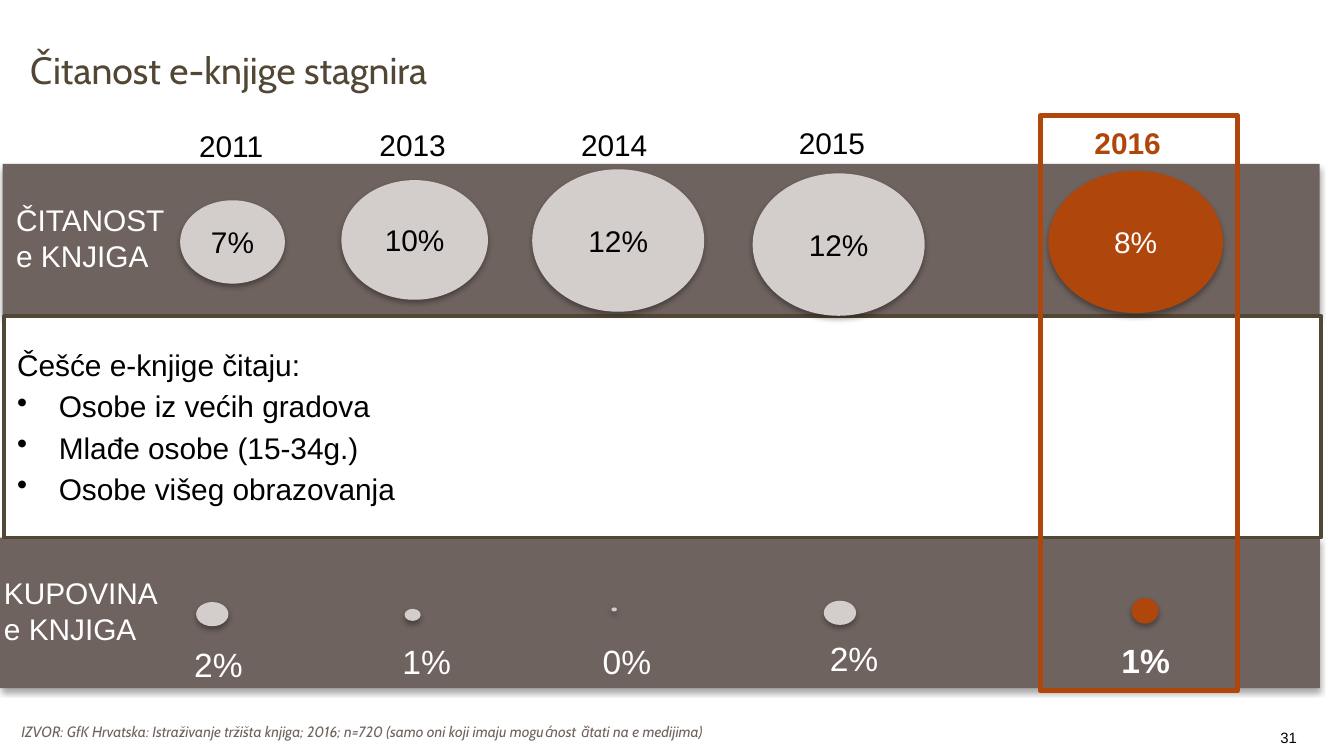
from dataclasses import dataclass
from typing import Optional

import pptx
import pptx.dml.color
import pptx.enum.shapes
import pptx.enum.text
import pptx.oxml
import pptx.oxml.ns
import pptx.util
from pptx.util import Inches

COLORS = {
    "band": "6F635F",
    "bubble": "D3CECC",
    "accent": "AF460B",
    "olive": "524634",
    "black": "000000",
    "white": "FFFFFF",
}
SHAPE = pptx.enum.shapes.MSO_SHAPE
ALIGN = pptx.enum.text.PP_ALIGN
ANCHOR = pptx.enum.text.MSO_ANCHOR


@dataclass(frozen=True)
class Box:
    left: float
    top: float
    width: float
    height: float


@dataclass(frozen=True)
class TextStyle:
    size: float = 16
    color: str = "black"
    font: str = "Arial"
    align: ALIGN = ALIGN.CENTER
    bold: bool = False
    italic: bool = False


@dataclass(frozen=True)
class YearColumn:
    year: str
    year_box: Box
    reading: str
    reading_bubble: Box
    buying: str
    buying_bubble: Box
    buying_box: Box
    current: bool = False


COLUMNS = [
    YearColumn("2011", Box(1.13, 0.95, 1.18, 0.27), "7%", Box(1.34, 1.49, 0.78, 0.62),
               "2%", Box(1.46, 4.48, 0.24, 0.18), Box(1.34, 4.74, 0.57, 0.4)),
    YearColumn("2013", Box(2.48, 0.94, 1.18, 0.27), "10%", Box(2.54, 1.34, 1.09, 0.89),
               "1%", Box(3.01, 4.53, 0.12, 0.09), Box(2.89, 4.72, 0.57, 0.4)),
    YearColumn("2014", Box(3.98, 0.94, 1.18, 0.27), "12%", Box(3.96, 1.26, 1.28, 1.06),
               "0%", Box(4.55, 4.52, 0.04, 0.03), Box(4.38, 4.72, 0.57, 0.4)),
    YearColumn("2015", Box(5.6, 0.93, 1.18, 0.27), "12%", Box(5.6, 1.29, 1.28, 1.06),
               "2%", Box(6.13, 4.47, 0.24, 0.18), Box(6.07, 4.7, 0.57, 0.4)),
    YearColumn("2016", Box(7.8, 0.93, 1.18, 0.27), "8%", Box(7.8, 1.27, 1.3, 1.06),
               "1%", Box(8.42, 4.45, 0.2, 0.19), Box(8.24, 4.71, 0.57, 0.4), True),
]
READERS = [
    "Češće e-knjige čitaju:",
    "Osobe iz većih gradova",
    "Mlađe osobe (15-34g.)",
    "Osobe višeg obrazovanja",
]


def rgb(color: str) -> pptx.dml.color.RGBColor:
    return pptx.dml.color.RGBColor.from_string(COLORS[color])


def lengths(box: Box) -> tuple:
    return Inches(box.left), Inches(box.top), Inches(box.width), Inches(box.height)


def add_shadow(shape) -> None:
    effects = shape._element.spPr.find(pptx.oxml.ns.qn("a:effectLst"))
    effects.append(pptx.oxml.parse_xml(
        f'<a:outerShdw {pptx.oxml.ns.nsdecls("a")} blurRad="39370" dist="22860" '
        'dir="5400000" rotWithShape="0"><a:srgbClr val="000000">'
        '<a:alpha val="35000"/></a:srgbClr></a:outerShdw>'))


def draw_shape(slide, kind: SHAPE, box: Box, fill: Optional[str] = None,
               line: Optional[str] = None, line_width: float = 1, shadow: bool = False):
    shape = slide.shapes.add_shape(kind, *lengths(box))
    shape.shadow.inherit = False
    if fill:
        shape.fill.solid()
        shape.fill.fore_color.rgb = rgb(fill)
    else:
        shape.fill.background()
    if line:
        shape.line.color.rgb = rgb(line)
        shape.line.width = pptx.util.Pt(line_width)
    else:
        shape.line.fill.background()
    if shadow:
        add_shadow(shape)
    return shape


def add_bullet(paragraph) -> None:
    properties = paragraph._p.get_or_add_pPr()
    properties.set("marL", str(Inches(0.31)))
    properties.set("indent", str(Inches(-0.31)))
    properties.append(pptx.oxml.parse_xml(
        f'<a:buChar {pptx.oxml.ns.nsdecls("a")} char="•"/>'))


def write(shape, text: str, style: TextStyle, anchor: ANCHOR = ANCHOR.MIDDLE,
          inset: bool = True, bulleted: bool = False) -> None:
    frame = shape.text_frame
    frame.word_wrap = True
    frame.vertical_anchor = anchor
    if not inset:
        frame.margin_left = frame.margin_right = frame.margin_top = frame.margin_bottom = 0
    frame.text = text
    for index, paragraph in enumerate(frame.paragraphs):
        if index:
            paragraph.space_before = pptx.util.Pt(3)
        if index and bulleted:
            add_bullet(paragraph)
        paragraph.alignment = style.align
        for run in paragraph.runs:
            run.font.name = style.font
            run.font.size = pptx.util.Pt(style.size)
            run.font.bold = style.bold
            run.font.italic = style.italic
            run.font.color.rgb = rgb(style.color)


def draw_label(slide, box: Box, text: str, style: TextStyle) -> None:
    write(slide.shapes.add_textbox(*lengths(box)), text, style, ANCHOR.TOP, inset=False)


def draw_column(slide, column: YearColumn) -> None:
    fill = "accent" if column.current else "bubble"
    draw_label(slide, column.year_box, column.year,
               TextStyle(color="accent" if column.current else "black", bold=column.current))
    reading = draw_shape(slide, SHAPE.OVAL, column.reading_bubble, fill, shadow=True)
    write(reading, column.reading, TextStyle(color="white" if column.current else "black"))
    draw_shape(slide, SHAPE.OVAL, column.buying_bubble, fill, shadow=True)
    buying = slide.shapes.add_textbox(*lengths(column.buying_box))
    write(buying, column.buying, TextStyle(18, "white", bold=column.current), ANCHOR.TOP)
    buying.text_frame.word_wrap = False
    buying.text_frame.auto_size = pptx.enum.text.MSO_AUTO_SIZE.SHAPE_TO_FIT_TEXT


def main() -> None:
    presentation = pptx.Presentation()
    presentation.slide_width = Inches(10)
    presentation.slide_height = Inches(10 * 9 / 16)
    slide = presentation.slides.add_slide(presentation.slide_layouts[6])

    page_number = draw_shape(slide, SHAPE.RECTANGLE, Box(8.23, 5.41, 1.42, 0.16), "white")
    write(page_number, "31", TextStyle(8, align=ALIGN.RIGHT), inset=False)
    title = draw_shape(slide, SHAPE.FLOWCHART_PROCESS, Box(0.12, 0.24, 8.82, 0.56))
    write(title, "Čitanost e-knjige stagnira",
          TextStyle(20, "olive", "Cabin", ALIGN.JUSTIFY))
    citation = draw_shape(slide, SHAPE.FLOWCHART_PROCESS, Box(0.06, 5.33, 9.51, 0.22))
    write(citation, "IZVOR: GfK Hrvatska: Istraživanje tržišta knjiga; 2016; n=720 "
          "(samo oni koji imaju mogućnost čitati na e medijima)",
          TextStyle(8, "band", "Cabin", ALIGN.JUSTIFY, italic=True))

    draw_shape(slide, SHAPE.RECTANGLE, Box(0.02, 1.22, 9.8, 1.12), "band", shadow=True)
    draw_shape(slide, SHAPE.RECTANGLE, Box(0, 4, 9.82, 1.12), "band", shadow=True)
    band_style = TextStyle(color="white", align=ALIGN.LEFT)
    draw_label(slide, Box(0.12, 1.5, 1.12, 0.74), "ČITANOST e KNJIGA", band_style)
    draw_label(slide, Box(0.03, 4.28, 1.3, 0.74), "KUPOVINA e KNJIGA", band_style)
    readers = draw_shape(slide, SHAPE.RECTANGLE, Box(0.03, 2.35, 9.8, 1.65),
                         "white", "olive", 2)
    write(readers, "\n".join(READERS), TextStyle(align=ALIGN.LEFT), bulleted=True)

    for column in COLUMNS:
        draw_column(slide, column)
    draw_shape(slide, SHAPE.RECTANGLE, Box(7.74, 0.86, 1.47, 4.28),
               line="accent", line_width=2.75)
    presentation.save("out.pptx")


if __name__ == "__main__":
    main()
